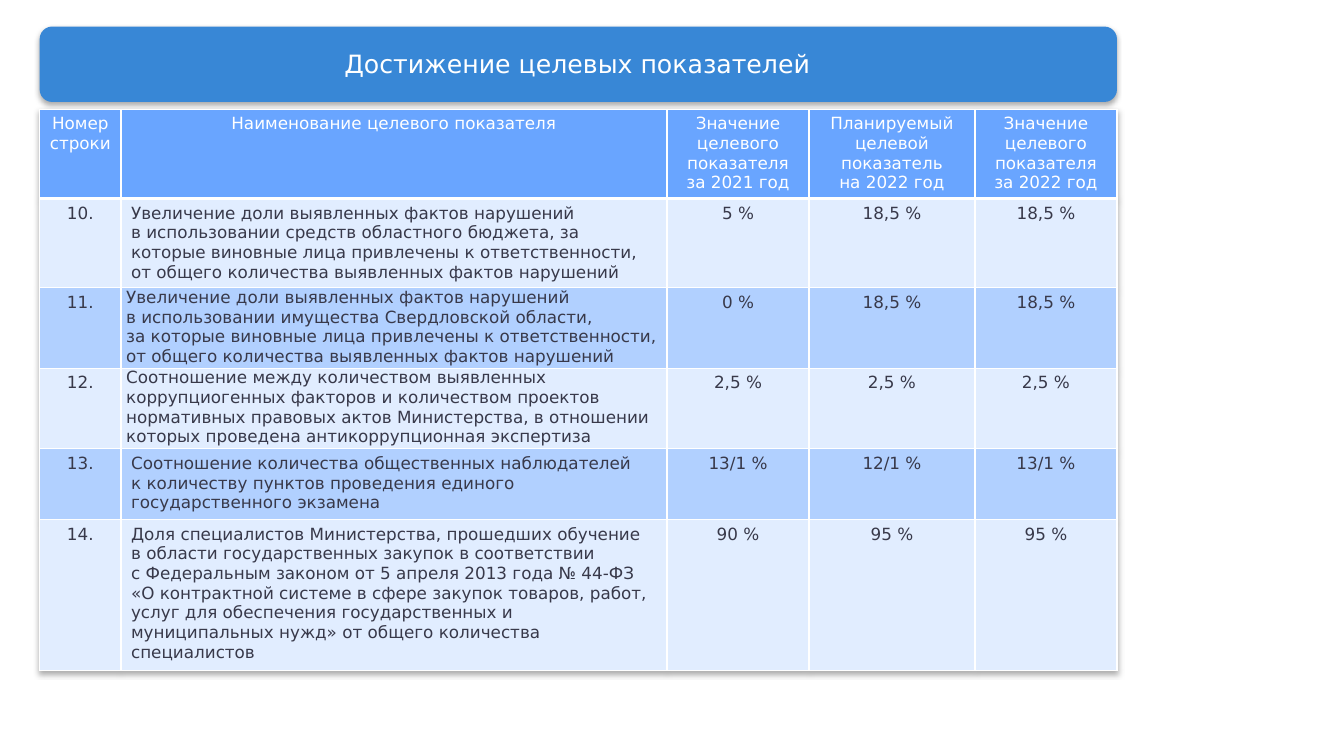
from lxml import etree
from pptx import Presentation
from pptx.dml.color import RGBColor
from pptx.enum import shapes, text
from pptx.oxml import ns
from pptx.util import Cm, Pt

WHITE = RGBColor(0xFF, 0xFF, 0xFF)
BANNER = RGBColor(0x38, 0x87, 0xD6)
HEADER = RGBColor(0x69, 0xA5, 0xFF)
BANDS = RGBColor(0xE1, 0xED, 0xFF), RGBColor(0xB1, 0xD0, 0xFF)
INK = RGBColor(0x38, 0x39, 0x4A)
FONT = "DejaVu Sans"

LEFT, WIDTH = Cm(1), Cm(27.15)
COLUMNS = [2.05, 13.76, 3.58, 4.18, 3.58]
HEIGHTS = [2.25, 2.25, 2.03, 2.03, 1.78, 3.8]
TIGHT_ROWS = 2, 3

ROWS = [
    ("Номер строки", "Наименование целевого показателя",
     "Значение целевого показателя\nза 2021 год",
     "Планируемый целевой показатель\nна 2022 год",
     "Значение целевого показателя\nза 2022 год"),
    ("10.", "Увеличение доли выявленных фактов нарушений\n"
     "в использовании средств областного бюджета, за которые виновные лица "
     "привлечены к ответственности, от общего количества выявленных фактов нарушений",
     "5 %", "18,5 %", "18,5 %"),
    ("11.", "Увеличение доли выявленных фактов нарушений\n"
     "в использовании имущества Свердловской области,\n"
     "за которые виновные лица привлечены к ответственности, "
     "от общего количества выявленных фактов нарушений",
     "0 %", "18,5 %", "18,5 %"),
    ("12.", "Соотношение между количеством выявленных коррупциогенных факторов "
     "и количеством проектов нормативных правовых актов Министерства, в отношении "
     "которых проведена антикоррупционная экспертиза",
     "2,5 %", "2,5 %", "2,5 %"),
    ("13.", "Соотношение количества общественных наблюдателей\n"
     "к количеству пунктов проведения единого государственного экзамена",
     "13/1 %", "12/1 %", "13/1 %"),
    ("14.", "Доля специалистов Министерства, прошедших обучение\n"
     "в области государственных закупок в соответствии\n"
     "с Федеральным законом от 5 апреля 2013 года № 44-ФЗ «О контрактной системе "
     "в сфере закупок товаров, работ, услуг для обеспечения государственных и "
     "муниципальных нужд» от общего количества специалистов",
     "90 %", "95 %", "95 %"),
]


def apply(obj, values):
    for name, value in values.items():
        setattr(obj, name, value)


def write(tf, content, size, color, align):
    tf.text = content
    for p in tf.paragraphs:
        p.alignment = align
        for r in p.runs:
            apply(r.font, {"name": FONT, "size": Pt(size), "bold": False})
            r.font.color.rgb = color


def add_shadow(parent, index):
    effects = etree.Element(ns.qn("a:effectLst"))
    shadow = etree.SubElement(effects, ns.qn("a:outerShdw"), blurRad=str(Pt(3.5)),
                              dist=str(Pt(2.2)), dir="5400000", rotWithShape="0")
    color = etree.SubElement(shadow, ns.qn("a:srgbClr"), val="000000")
    etree.SubElement(color, ns.qn("a:alpha"), val="32000")
    parent.insert(index, effects)


def add_banner(s, title):
    sp = s.shapes.add_shape(shapes.MSO_SHAPE.ROUNDED_RECTANGLE,
                            LEFT, Cm(0.67), WIDTH, Cm(1.9))
    sp.fill.solid()
    sp.fill.fore_color.rgb = BANNER
    sp.line.fill.background()
    props = sp._element.spPr
    add_shadow(props, len(props))

    sp = s.shapes.title
    s.shapes._spTree.append(sp._element)
    apply(sp, {"left": Cm(1.4), "top": Cm(1.1), "width": Cm(26.3), "height": Cm(1.02)})
    apply(sp.text_frame, {"word_wrap": True, "vertical_anchor": text.MSO_ANCHOR.MIDDLE})
    write(sp.text_frame, title, 18, WHITE, text.PP_ALIGN.CENTER)


def set_borders(cell, bottom):
    props = cell._tc.get_or_add_tcPr()
    for side, width in {"L": 1, "R": 1, "T": 1, "B": bottom}.items():
        line = etree.SubElement(props, ns.qn(f"a:ln{side}"), w=str(Pt(width)))
        fill = etree.SubElement(line, ns.qn("a:solidFill"))
        etree.SubElement(fill, ns.qn("a:srgbClr"), val=str(WHITE))


def fill_cell(cell, row, column, content):
    header = row == 0
    set_borders(cell, 3 if header else 1)
    cell.fill.solid()
    cell.fill.fore_color.rgb = HEADER if header else BANDS[(row - 1) % 2]
    name = column == 1 and not header
    if name and row in TIGHT_ROWS:
        apply(cell, {"margin_left": Cm(0.13), "margin_right": Cm(0.13),
                     "margin_top": 0, "margin_bottom": 0})
    align = text.PP_ALIGN.LEFT if name else text.PP_ALIGN.CENTER
    write(cell.text_frame, content, 12, WHITE if header else INK, align)


def add_indicators(s):
    frame = s.shapes.add_table(len(ROWS), len(COLUMNS), LEFT, Cm(2.75),
                               WIDTH, Cm(sum(HEIGHTS)))
    table = frame.table
    add_shadow(table._tbl.tblPr, 0)
    for column, width in zip(table.columns, COLUMNS):
        column.width = Cm(width)
    for i, values in enumerate(ROWS):
        table.rows[i].height = Cm(HEIGHTS[i])
        for j, content in enumerate(values):
            fill_cell(table.cell(i, j), i, j, content)


def main():
    prs = Presentation()
    apply(prs, {"slide_width": Cm(33.87), "slide_height": Cm(19.05)})
    s = prs.slides.add_slide(prs.slide_layouts[5])
    add_banner(s, "Достижение целевых показателей")
    add_indicators(s)
    prs.save("out.pptx")


if __name__ == "__main__":
    main()
